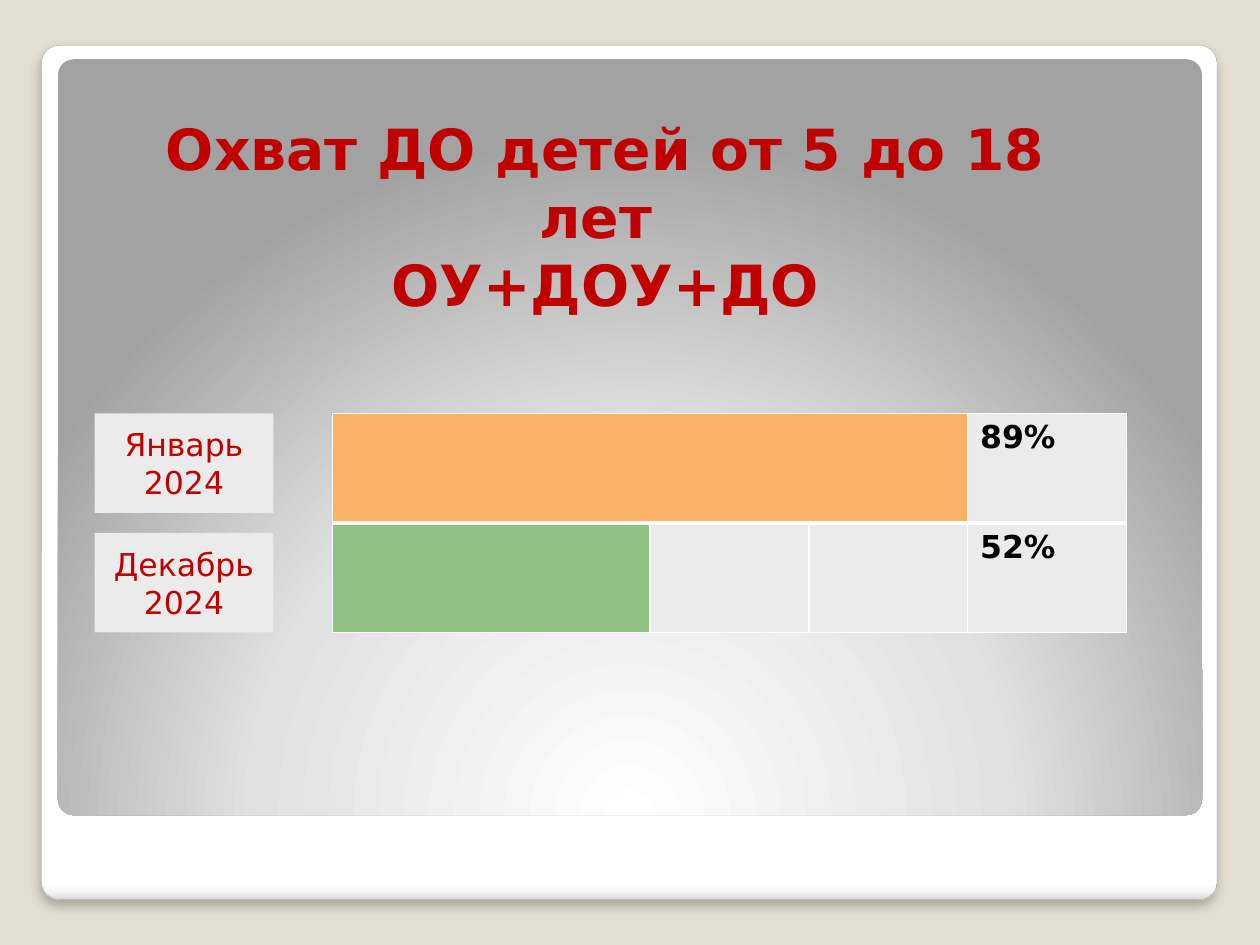
from lxml.etree import SubElement
from pptx import Presentation
from pptx.dml.color import RGBColor
from pptx.enum.shapes import MSO_SHAPE
from pptx.enum.text import MSO_ANCHOR, MSO_AUTO_SIZE, PP_ALIGN
from pptx.oxml.ns import qn
from pptx.util import Inches, Pt

FONT = "DejaVu Sans"
RED, GREY, WHITE = "C00000", "EBEBEB", "FFFFFF"
LEFT, TABLE_LEFT, TABLE_TOP = 0.75, 2.64, 3.28
COLUMN, ROW = 1.26, 0.87
LABEL_WIDTH, LABEL_HEIGHT, LABEL_STEP = 1.42, 0.79, 0.95
# Month, bar colour, columns covered by the bar, value
MONTHS = [
    ("Январь 2024", "F9B268", 3, "89%"),
    ("Декабрь 2024", "8EC182", 1, "52%"),
]


def color(value):
    return RGBColor.from_string(value)


def add_element(parent, tag, **attributes):
    return SubElement(parent, qn(tag), {k: str(v) for k, v in attributes.items()})


def paint(target, value):
    target.fill.solid()
    target.fill.fore_color.rgb = color(value)


def format_text(frame, size, value, bold=False, align=None):
    for para in frame.paragraphs:
        para.alignment = align
        for span in para.runs:
            span.font.name, span.font.size, span.font.bold = FONT, Pt(size), bold
            span.font.color.rgb = color(value)


def add_box(page, kind, left, top, width, height):
    box = page.shapes.add_shape(
        kind, Inches(left), Inches(top), Inches(width), Inches(height))
    box.shadow.inherit = False
    box.line.fill.background()
    return box


def add_panel(page, place, stops):
    """Add a rounded panel and return it with its empty gradient."""
    panel = add_box(page, MSO_SHAPE.ROUNDED_RECTANGLE, *place)
    panel.adjustments[0] = 0.021
    panel.fill.background()
    properties = panel._element.spPr
    gradient = add_element(properties, "a:gradFill", rotWithShape=1)
    properties.replace(properties.find(qn("a:noFill")), gradient)
    stop_list = add_element(gradient, "a:gsLst")
    for position, value in stops:
        stop = add_element(stop_list, "a:gs", pos=position * 1000)
        add_element(stop, "a:srgbClr", val=value)
    return panel, gradient


def add_backdrop(page):
    # White card with a soft shadow
    card, gradient = add_panel(
        page, (0.33, 0.36, 9.33, 6.78),
        [(0, WHITE), (98, WHITE), (99, "F7F7F7"), (100, "DADADA")])
    add_element(gradient, "a:lin", ang=5400000, scaled=0)
    card.line.color.rgb = color("A4A4A4")
    card.line.width = Pt(0.16)
    effects = card._element.spPr.find(qn("a:effectLst"))
    shadow = add_element(effects, "a:outerShdw", blurRad=Pt(6), dist=Pt(4),
                         dir=5400000, algn="t", rotWithShape=0)
    shade = add_element(shadow, "a:srgbClr", val="000000")
    add_element(shade, "a:alpha", val=25000)

    # Grey inner panel, lit from below
    _, gradient = add_panel(
        page, (0.46, 0.47, 9.08, 6),
        [(0, WHITE), (55, "E1E1E1"), (100, "A2A2A2")])
    glow = add_element(gradient, "a:path", path="circle")
    add_element(glow, "a:fillToRect", l=50000, t=175000, r=50000, b=-75000)


def add_title(page, text):
    title = page.shapes.title
    title.left, title.top = Inches(LEFT), Inches(0.68)
    title.width, title.height = Inches(8.11), Inches(1.89)
    frame = title.text_frame
    frame.text = text
    frame.word_wrap = True
    frame.auto_size = MSO_AUTO_SIZE.NONE
    frame.vertical_anchor = MSO_ANCHOR.BOTTOM
    format_text(frame, 32.4, RED, True, PP_ALIGN.CENTER)
    page.shapes._spTree.append(title._element)  # bring in front of the panels


def set_borders(cell, top, bottom):
    properties = cell._tc.get_or_add_tcPr()
    sides = (("a:lnL", 1), ("a:lnR", 1), ("a:lnT", top), ("a:lnB", bottom))
    for index, (tag, width) in enumerate(sides):
        line = add_element(properties, tag, w=Pt(width))
        add_element(add_element(line, "a:solidFill"), "a:srgbClr", val=WHITE)
        properties.insert(index, line)


def add_bars(page):
    table = page.shapes.add_table(
        len(MONTHS), 4, Inches(TABLE_LEFT), Inches(TABLE_TOP),
        Inches(5 * COLUMN), Inches(len(MONTHS) * ROW)).table
    for index, column in enumerate(table.columns):
        column.width = Inches(COLUMN * (2 if index == 0 else 1))
    for index, (_, bar_color, covered, value) in enumerate(MONTHS):
        table.rows[index].height = Inches(ROW)
        cells = [table.cell(index, number) for number in range(4)]
        for number, cell in enumerate(cells):
            set_borders(cell, *((1, 3) if index == 0 else (3, 1)))
            paint(cell, bar_color if number < covered else GREY)
        if covered > 1:
            cells[0].merge(cells[covered - 1])
        cells[-1].text_frame.text = value
        format_text(cells[-1].text_frame, 18, "000000", True)


def add_labels(page):
    for index, (month, *_) in enumerate(MONTHS):
        label = add_box(page, MSO_SHAPE.RECTANGLE, LEFT,
                        TABLE_TOP + index * LABEL_STEP, LABEL_WIDTH, LABEL_HEIGHT)
        paint(label, GREY)
        label.text_frame.text = month
        label.text_frame.word_wrap = True
        label.text_frame.vertical_anchor = MSO_ANCHOR.MIDDLE
        format_text(label.text_frame, 18, RED, align=PP_ALIGN.CENTER)


def main():
    deck = Presentation()
    deck.slide_width, deck.slide_height = Inches(10), Inches(7.5)
    page = deck.slides.add_slide(deck.slide_layouts[5])
    paint(page.background, "E3DED1")
    add_backdrop(page)
    add_title(page, "Охват ДО детей от 5 до 18 лет \vОУ+ДОУ+ДО")
    add_bars(page)
    add_labels(page)
    deck.save("out.pptx")


if __name__ == "__main__":
    main()
